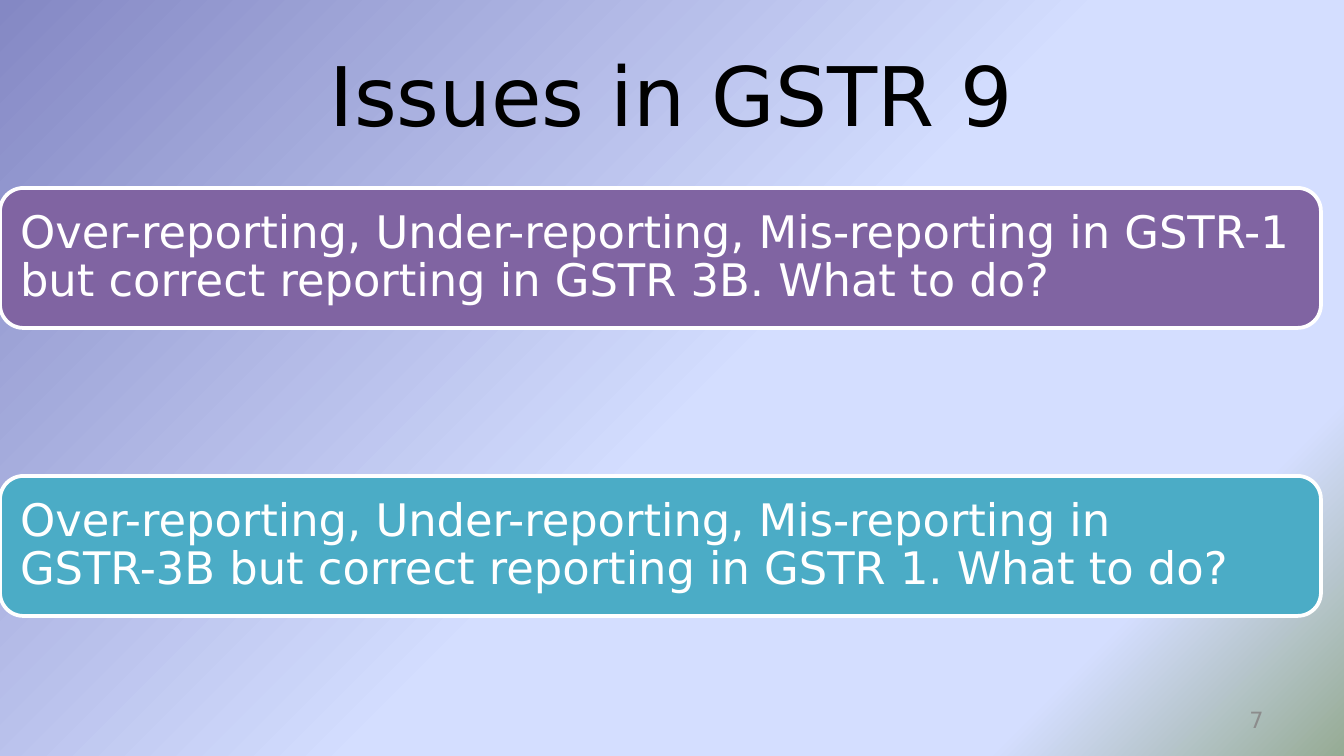
from copy import deepcopy
from dataclasses import dataclass

from pptx import Presentation
from pptx import util as u
from pptx.dml.color import RGBColor
from pptx.enum import shapes, text
from pptx.oxml.ns import qn

SCALE = 914400 / 134.4  # EMU in one px
FONT = "DejaVu Sans"
COLORS = {
    "title": "000000",
    "number": "8C8C8C",
    "white": "FFFFFF",
    "purple": "8064A2",
    "teal": "4BACC6",
}
BACKDROP = [(0, "8488C4"), (0.53, "D4DEFF"), (0.83, "D4DEFF"), (1, "96AB94")]
CARD_TOP, CARD_PITCH, CARD_WIDTH, CARD_HEIGHT = 188, 288, 1321, 140


@dataclass
class Issue:
    question: str
    color: str


ISSUES = [
    Issue("Over-reporting, Under-reporting, Mis-reporting in GSTR-1 "
          "but correct reporting in GSTR 3B. What to do?", "purple"),
    Issue("Over-reporting, Under-reporting, Mis-reporting in GSTR-3B "
          "but correct reporting in GSTR 1. What to do?", "teal"),
]


def px(length: int) -> int:
    return round(length * SCALE)


def rgb(name: str) -> RGBColor:
    return RGBColor.from_string(COLORS[name])


def place(shape, left: int, top: int, width: int, height: int) -> None:
    box = {"left": left, "top": top, "width": width, "height": height}
    for side, length in box.items():
        setattr(shape, side, px(length))


def write(shape, words: str, size: int, color: str, align, inset: float = 0.1,
          line_spacing: float = 1.0) -> None:
    frame = shape.text_frame
    frame.text = words
    paragraph = frame.paragraphs[0]
    frame_format = {
        "word_wrap": True,
        "auto_size": text.MSO_AUTO_SIZE.NONE,
        "vertical_anchor": text.MSO_ANCHOR.MIDDLE,
        "margin_left": u.Inches(0.1),
        "margin_right": u.Inches(0.1),
        "margin_top": u.Inches(inset),
        "margin_bottom": u.Inches(inset),
    }
    formats = [
        (frame, frame_format),
        (paragraph, {"alignment": align, "line_spacing": line_spacing}),
        (paragraph.runs[0].font, {"name": FONT, "size": u.Pt(size)}),
    ]
    for target, values in formats:
        for name, value in values.items():
            setattr(target, name, value)
    paragraph.runs[0].font.color.rgb = rgb(color)


def paint_backdrop(slide) -> None:
    fill = slide.background.fill
    fill.gradient()
    fill.gradient_angle = 315
    stop_list = slide.element.find(".//" + qn("a:gsLst"))
    while len(stop_list) < len(BACKDROP):
        stop_list.append(deepcopy(stop_list[0]))
    for stop, (position, color) in zip(fill.gradient_stops, BACKDROP):
        stop.position = position
        stop.color.rgb = RGBColor.from_string(color)


def draw_issue(slide, issue: Issue, top: int) -> None:
    card = slide.shapes.add_shape(shapes.MSO_SHAPE.ROUNDED_RECTANGLE, 0, 0, 0, 0)
    place(card, 0, top, CARD_WIDTH, CARD_HEIGHT)
    card.shadow.inherit = False
    card.fill.solid()
    card.fill.fore_color.rgb = rgb(issue.color)
    card.line.color.rgb = rgb("white")
    card.line.width = u.Pt(2)
    write(card, issue.question, 24, "white", text.PP_ALIGN.LEFT,
          line_spacing=0.9)


def main() -> None:
    deck = Presentation()
    deck.slide_width, deck.slide_height = px(1344), px(756)
    slide = deck.slides.add_slide(deck.slide_layouts[5])
    paint_backdrop(slide)

    # Title
    title = slide.shapes.title
    place(title, 67, 31, 1210, 126)
    write(title, "Issues in GSTR 9", 44, "title", text.PP_ALIGN.CENTER, 0.05)

    # Page number
    page_number = slide.shapes.add_textbox(0, 0, 0, 0)
    place(page_number, 964, 700, 313, 40)
    write(page_number, "7", 12, "number", text.PP_ALIGN.RIGHT, 0.05)

    # Issue cards
    for row, issue in enumerate(ISSUES):
        draw_issue(slide, issue, CARD_TOP + row * CARD_PITCH)

    deck.save("out.pptx")


if __name__ == "__main__":
    main()
